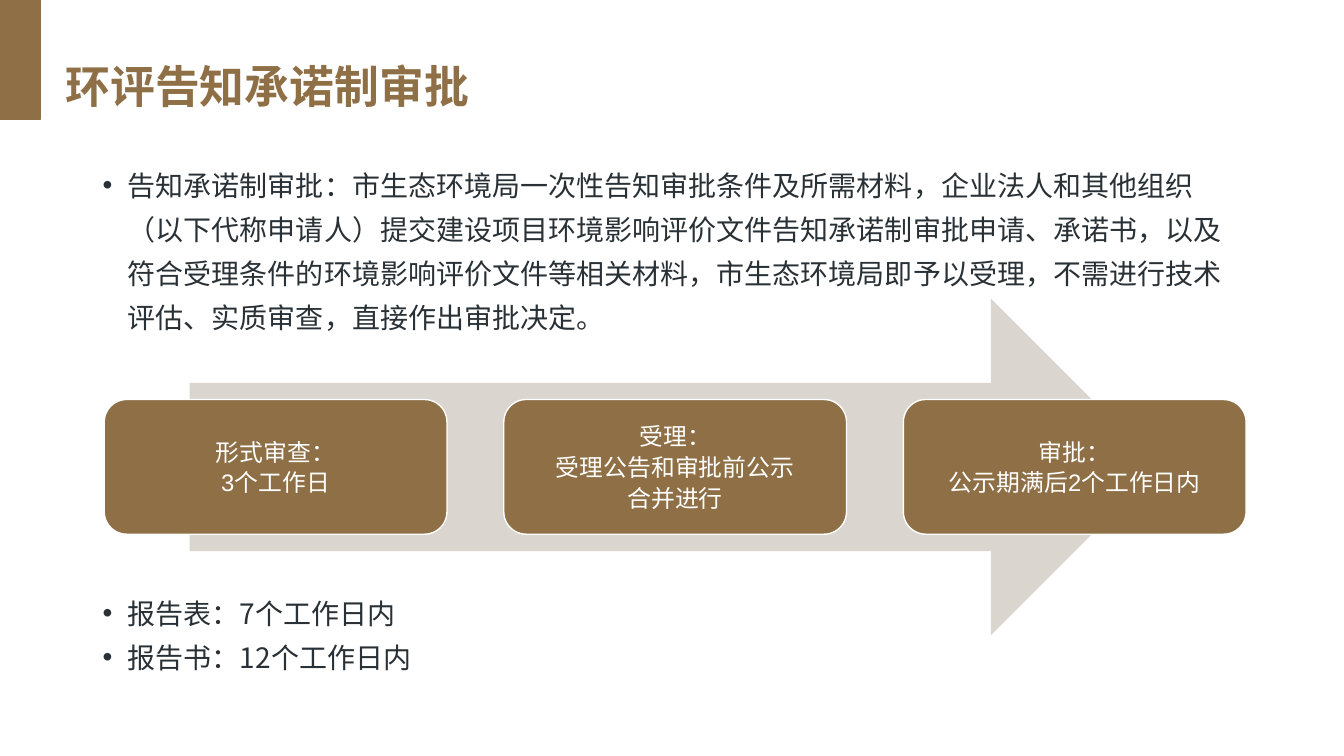
from lxml.etree import SubElement
from pptx import Presentation
from pptx.dml.color import RGBColor
from pptx.enum.shapes import MSO_SHAPE
from pptx.enum.text import MSO_ANCHOR, PP_ALIGN
from pptx.oxml.ns import qn
from pptx.util import Pt

BROWN = RGBColor(0x8F, 0x70, 0x46)
BEIGE = RGBColor(0xDB, 0xD5, 0xCF)
DARK = RGBColor(0x29, 0x31, 0x36)
WHITE = RGBColor(0xFF, 0xFF, 0xFF)
CJK = "Noto Sans CJK SC"

INTRO = [
    "告知承诺制审批：市生态环境局一次性告知审批条件及所需材料，企业法人和其他组织"
    "（以下代称申请人）提交建设项目环境影响评价文件告知承诺制审批申请、承诺书，以及"
    "符合受理条件的环境影响评价文件等相关材料，市生态环境局即予以受理，不需进行技术"
    "评估、实质审查，直接作出审批决定。"
]
DEADLINES = ["报告表：7个工作日内", "报告书：12个工作日内"]
STEPS = [
    ["形式审查：", "3个工作日"],
    ["受理：", "受理公告和审批前公示", "合并进行"],
    ["审批：", "公示期满后2个工作日内"],
]


def style_paragraph(p, text, size, color, font, bold=False):
    r = p.add_run()
    r.text = text
    p.font.size = Pt(size)
    p.font.bold = bold
    p.font.color.rgb = color
    p.font.name = font
    SubElement(r._r.get_or_add_rPr(), qn("a:ea"), typeface=CJK)


def fill_text(tf, lines, size, color, font):
    for i, line in enumerate(lines):
        p = tf.paragraphs[0] if i == 0 else tf.add_paragraph()
        style_paragraph(p, line, size, color, font)


def add_title(s, text):
    sp = s.shapes.title
    sp.left, sp.top, sp.width, sp.height = Pt(39.6), Pt(38.9), Pt(472.3), Pt(49)
    tf = sp.text_frame
    tf.vertical_anchor = MSO_ANCHOR.MIDDLE
    p = tf.paragraphs[0]
    p.alignment = PP_ALIGN.LEFT
    p.line_spacing = 0.9
    style_paragraph(p, text, 32, BROWN, "Arial", bold=True)


def add_block(s, kind, left, top, width, height, fill, line=None):
    sp = s.shapes.add_shape(kind, Pt(left), Pt(top), Pt(width), Pt(height))
    sp.shadow.inherit = False
    sp.fill.solid()
    sp.fill.fore_color.rgb = fill
    if line is None:
        sp.line.fill.background()
    else:
        sp.line.color.rgb = line
        sp.line.width = Pt(1)
    return sp


def add_bullets(s, top, height, lines):
    sp = s.shapes.add_textbox(Pt(66.2), Pt(top), Pt(828), Pt(height))
    tf = sp.text_frame
    tf.word_wrap = True
    fill_text(tf, lines, 20, DARK, CJK)
    for p in tf.paragraphs:
        p.line_spacing = Pt(31.4)
        pPr = p._p.get_or_add_pPr()
        pPr.set("marL", str(Pt(18)))
        pPr.set("indent", str(-Pt(18)))
        bu_font = pPr.makeelement(qn("a:buFont"), {"typeface": "Arial"})
        bu_char = pPr.makeelement(qn("a:buChar"), {"char": "•"})
        defaults = pPr.find(qn("a:defRPr"))
        defaults.addprevious(bu_font)
        defaults.addprevious(bu_char)


def add_step(s, left, lines):
    sp = add_block(s, MSO_SHAPE.ROUNDED_RECTANGLE, left, 285.4, 244.8, 96.2, BROWN, WHITE)
    tf = sp.text_frame
    tf.word_wrap = True
    tf.vertical_anchor = MSO_ANCHOR.MIDDLE
    tf.margin_left = tf.margin_right = tf.margin_top = tf.margin_bottom = Pt(5)
    fill_text(tf, lines, 17, WHITE, "Arial")
    for p in tf.paragraphs:
        p.alignment = PP_ALIGN.CENTER
    for p in tf.paragraphs[:-1]:
        p.space_after = Pt(1.5)


def main():
    prs = Presentation()
    prs.slide_width, prs.slide_height = Pt(960), Pt(540)
    s = prs.slides.add_slide(prs.slide_layouts[5])
    add_block(s, MSO_SHAPE.RECTANGLE, -0.7, 0, 29.5, 85, BROWN, BROWN)
    add_bullets(s, 109.4, 134, INTRO)
    add_bullets(s, 414.8, 71, DEADLINES)
    add_title(s, "环评告知承诺制审批")
    add_block(s, MSO_SHAPE.RIGHT_ARROW, 135.4, 213.3, 692.6, 240.5, BEIGE)
    for i, lines in enumerate(STEPS):
        add_step(s, 74.5 + i * 285.4, lines)
    prs.save("out.pptx")


if __name__ == "__main__":
    main()
